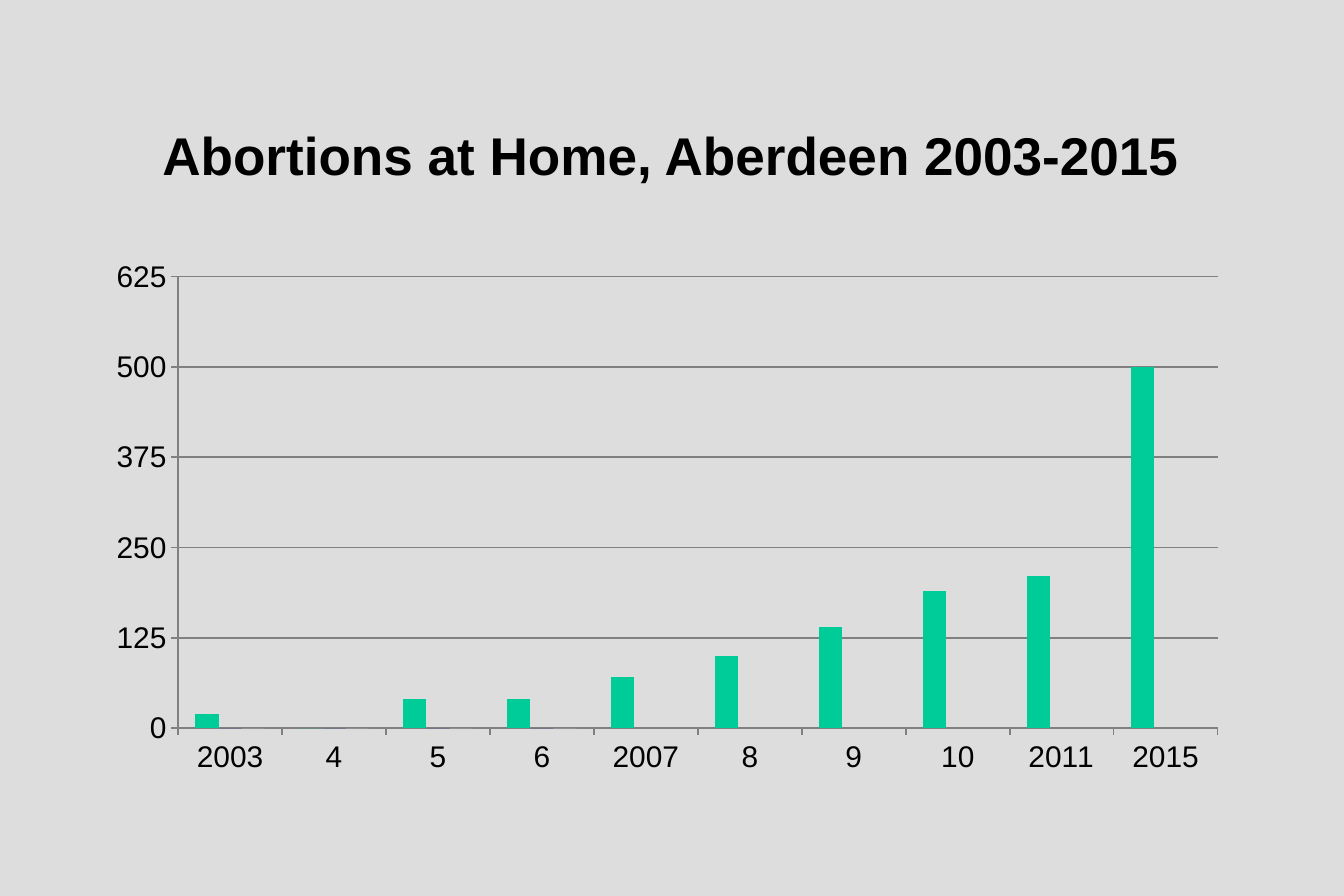
from lxml.etree import SubElement
from pptx import Presentation
from pptx.chart.data import CategoryChartData
from pptx.dml.color import RGBColor
from pptx.enum.chart import XL_CHART_TYPE, XL_TICK_LABEL_POSITION, XL_TICK_MARK
from pptx.enum.text import MSO_ANCHOR, PP_ALIGN
from pptx.oxml.ns import qn
from pptx.util import Pt

TITLE = "Abortions at Home, Aberdeen 2003-2015"
YEARS = ["2003", "4", "5", "6", "2007", "8", "9", "10", "2011", "2015"]
SERIES = [
    ("Series 1", [20, 0, 40, 40, 70, 100, 140, 190, 210, 500], "00CC99"),
    ("Series 2", [0, 0, 0, 0], "3333CC"),
    ("Series 3", [0, 0, 0, 0], "FFFFFF"),
]
FONT = "Arial"
BLACK, GRAY, BACKGROUND = "000000", "808080", "DDDDDD"
SLIDE_SIZE = (1344, 896)
TITLE_BOX = (100, 80, 1142, 149)
CHART_BOX = (99, 244, 1130, 544)
PLOT = {"x": 0.07, "y": 0.06, "w": 0.92, "h": 0.83}
STEP, TOP = 125, 625
INSET = 6
EMU_PER_PX = 10287000 / SLIDE_SIZE[0]


def px(n):
    return round(n * EMU_PER_PX)


def rgb(value):
    return RGBColor.from_string(value)


def set_font(font, size, bold=False):
    font.name, font.size, font.bold = FONT, Pt(size), bold
    font.color.rgb = rgb(BLACK)


def set_line(line):
    line.color.rgb = rgb(GRAY)
    line.width = Pt(1)


def add_title(s):
    tf = s.shapes.add_textbox(*map(px, TITLE_BOX)).text_frame
    tf.word_wrap = True
    tf.vertical_anchor = MSO_ANCHOR.MIDDLE
    tf.margin_left = tf.margin_right = tf.margin_top = tf.margin_bottom = px(INSET)
    p = tf.paragraphs[0]
    p.alignment = PP_ALIGN.CENTER
    r = p.add_run()
    r.text = TITLE
    set_font(r.font, 32, True)


def set_plot_layout(chart):
    area = chart._chartSpace.chart.plotArea
    layout = area.find(qn("c:layout"))
    if layout is None:
        layout = SubElement(area, qn("c:layout"))
        area.insert(0, layout)
    manual = SubElement(layout, qn("c:manualLayout"))
    settings = [("layoutTarget", "inner"), ("xMode", "edge"), ("yMode", "edge")]
    for tag, value in settings + list(PLOT.items()):
        SubElement(manual, qn(f"c:{tag}")).set("val", str(value))


def add_chart(s):
    data = CategoryChartData()
    data.categories = YEARS
    for name, values, _ in SERIES:
        data.add_series(name, values + [None] * (len(YEARS) - len(values)))
    chart = s.shapes.add_chart(
        XL_CHART_TYPE.COLUMN_CLUSTERED, *map(px, CHART_BOX), data
    ).chart
    chart.has_legend = chart.has_title = False
    chart.font.name, chart.font.size = "Times New Roman", Pt(10)
    chart.font.color.rgb = rgb(BLACK)

    plot = chart.plots[0]
    plot.gap_width, plot.overlap = 150, 0
    plot.vary_by_categories = False
    for series, (_, _, color) in zip(plot.series, SERIES):
        series.invert_if_negative = False
        series.format.fill.solid()
        series.format.fill.fore_color.rgb = rgb(color)

    for axis in (chart.category_axis, chart.value_axis):
        axis.major_tick_mark = XL_TICK_MARK.OUTSIDE
        axis.minor_tick_mark = XL_TICK_MARK.NONE
        set_font(axis.tick_labels.font, 18)
        set_line(axis.format.line)
    chart.category_axis.tick_label_position = XL_TICK_LABEL_POSITION.LOW

    axis = chart.value_axis
    axis.minimum_scale, axis.maximum_scale, axis.major_unit = 0, TOP, STEP
    axis.tick_labels.number_format = "0"
    axis.tick_labels.number_format_is_linked = False
    axis.has_major_gridlines = True
    set_line(axis.major_gridlines.format.line)
    set_plot_layout(chart)


def main():
    prs = Presentation()
    prs.slide_width, prs.slide_height = map(px, SLIDE_SIZE)
    s = prs.slides.add_slide(prs.slide_layouts[6])
    s.background.fill.solid()
    s.background.fill.fore_color.rgb = rgb(BACKGROUND)
    add_title(s)
    add_chart(s)
    prs.save("out.pptx")


if __name__ == "__main__":
    main()
